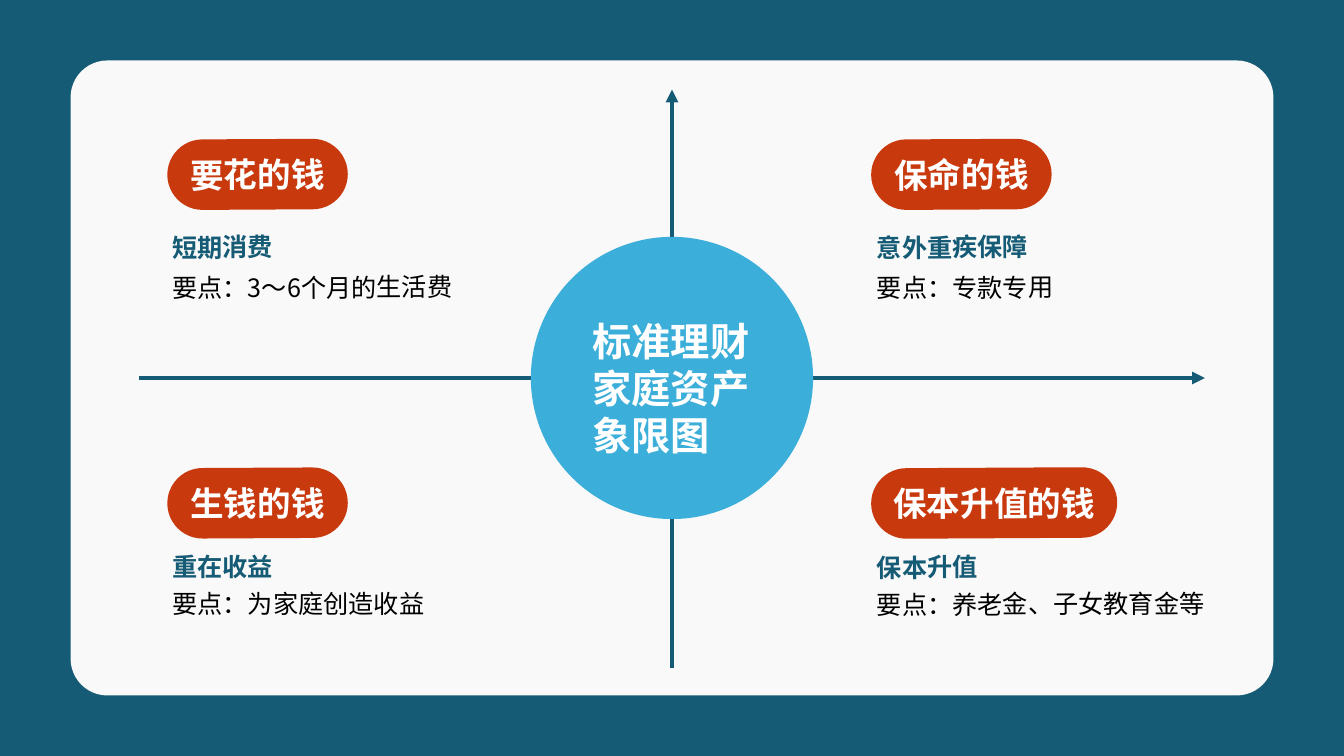
from dataclasses import dataclass

from lxml import etree
from pptx import Presentation
from pptx.dml.color import RGBColor
from pptx.enum.shapes import MSO_CONNECTOR, MSO_SHAPE
from pptx.enum.text import MSO_ANCHOR, MSO_AUTO_SIZE, PP_ALIGN
from pptx.oxml.ns import qn
from pptx.util import Inches, Pt

ROUNDED = MSO_SHAPE.ROUNDED_RECTANGLE
OVAL = MSO_SHAPE.OVAL
STRAIGHT = MSO_CONNECTOR.STRAIGHT
MIDDLE = MSO_ANCHOR.MIDDLE
TOP = MSO_ANCHOR.TOP
GROW = MSO_AUTO_SIZE.SHAPE_TO_FIT_TEXT
FIXED = MSO_AUTO_SIZE.NONE
LEFT = PP_ALIGN.LEFT
CENTER = PP_ALIGN.CENTER
JUSTIFY = PP_ALIGN.JUSTIFY

WIDTH = Inches(13.33)
HEIGHT = Inches(7.5)
FONT = "Noto Sans CJK SC"
TILT = 359.7
COLORS = {
    "teal": "155B75",
    "panel": "F9F9F9",
    "red": "C83A0E",
    "blue": "3BAEDA",
    "white": "FFFFFF",
    "black": "000000",
}
FORMATS = {
    "label": {"size": Pt(24), "bold": True, "color": "white"},
    "heading": {"size": Pt(18), "bold": True, "color": "teal"},
    "point": {"size": Pt(18), "bold": False, "color": "black"},
    "title": {"size": Pt(28), "bold": True, "color": "white"},
}


@dataclass(frozen=True)
class Area:
    """Shares of the slide in percent."""

    left: float
    top: float
    width: float
    height: float

    def lengths(self) -> tuple[int, int, int, int]:
        return (across(self.left), down(self.top),
                across(self.width), down(self.height))


@dataclass(frozen=True)
class Axis:
    start: tuple[float, float]
    end: tuple[float, float]


@dataclass(frozen=True)
class Quadrant:
    label: str
    heading: str
    point: str
    pill_left: float
    text_left: float
    pill_top: float
    heading_top: float
    point_top: float
    text_tilt: float = TILT


PANEL = Area(5.25, 8, 89.5, 84)
CIRCLE = Area(39.5, 31.33, 21, 37.33)
TITLE_AREA = Area(43.36, 41.33, 13.28, 20.13)
TITLE = ["标准理财", "家庭资产", "象限图"]
AXES = [
    Axis((50, 88.4), (50, 11.87)),
    Axis((10.35, 50), (89.65, 50)),
]
LEFT_COLUMN = (12.45, 12.08)
RIGHT_COLUMN = (64.82, 64.5)
UPPER_ROW = (18.4, 30, 35.33)
LOWER_ROW = (61.87, 72.33, 77.2)
QUADRANTS = [
    Quadrant("要花的钱", "短期消费", "要点：3～6个月的生活费", *LEFT_COLUMN, *UPPER_ROW),
    Quadrant("生钱的钱", "重在收益", "要点：为家庭创造收益", *LEFT_COLUMN, *LOWER_ROW, 0),
    Quadrant("保命的钱", "意外重疾保障", "要点：专款专用", *RIGHT_COLUMN, *UPPER_ROW),
    Quadrant("保本升值的钱", "保本升值", "要点：养老金、子女教育金等", *RIGHT_COLUMN, *LOWER_ROW),
]


def across(share: float) -> int:
    return round(WIDTH * share / 100)


def down(share: float) -> int:
    return round(HEIGHT * share / 100)


def color(name: str) -> RGBColor:
    return RGBColor.from_string(COLORS[name])


def text_width(text: str) -> float:
    units = sum(0.5 if letter.isascii() else 1 for letter in text)
    return 1.9 * units + 1.6


def write(box, lines: list[str], style: str, align, anchor, auto_size) -> None:
    frame = box.text_frame
    frame.word_wrap = True
    frame.auto_size = auto_size
    frame.vertical_anchor = anchor
    for index, line in enumerate(lines):
        para = frame.add_paragraph() if index else frame.paragraphs[0]
        para.alignment = align
        span = para.add_run()
        span.text = line
        for key, value in FORMATS[style].items():
            if key == "color":
                span.font.color.rgb = color(value)
            else:
                setattr(span.font, key, value)
        span.font.name = FONT
        properties = span.font._element
        etree.SubElement(properties, qn("a:ea")).set("typeface", FONT)


def add_block(page, kind, area: Area, fill: str, corner: float | None = None):
    block = page.shapes.add_shape(kind, *area.lengths())
    block.shadow.inherit = False
    block.fill.solid()
    block.fill.fore_color.rgb = color(fill)
    block.line.fill.background()
    if corner is not None:
        block.adjustments[0] = corner
    return block


def add_text(page, area: Area, lines: list[str], style: str,
             align=LEFT, tilt: float = 0) -> None:
    box = page.shapes.add_textbox(*area.lengths())
    box.rotation = tilt
    write(box, lines, style, align, TOP, GROW)


def add_axis(page, axis: Axis) -> None:
    (start_x, start_y), (end_x, end_y) = axis.start, axis.end
    arrow = page.shapes.add_connector(
        STRAIGHT, across(start_x), down(start_y), across(end_x), down(end_y))
    arrow.line.color.rgb = color("teal")
    arrow.line.width = Pt(3)
    properties = arrow._element.spPr
    line = properties.find(qn("a:ln"))
    etree.SubElement(line, qn("a:tailEnd")).set("type", "triangle")
    etree.SubElement(properties, qn("a:effectLst"))


def add_quadrant(page, quadrant: Quadrant) -> None:
    pill_width = 2.44 * len(quadrant.label) + 3.67
    pill_area = Area(quadrant.pill_left, quadrant.pill_top, pill_width, 9.33)
    pill = add_block(page, ROUNDED, pill_area, "red", 0.5)
    pill.rotation = TILT
    write(pill, [quadrant.label], "label", CENTER, MIDDLE, FIXED)
    for style, text, top in (
        ("heading", quadrant.heading, quadrant.heading_top),
        ("point", quadrant.point, quadrant.point_top),
    ):
        area = Area(quadrant.text_left, top, text_width(text), 5.33)
        add_text(page, area, [text], style, tilt=quadrant.text_tilt)


def main() -> None:
    deck = Presentation()
    deck.slide_width = WIDTH
    deck.slide_height = HEIGHT
    page = deck.slides.add_slide(deck.slide_layouts[6])
    page.background.fill.solid()
    page.background.fill.fore_color.rgb = color("teal")
    add_block(page, ROUNDED, PANEL, "panel", 0.058)
    for axis in AXES:
        add_axis(page, axis)
    for quadrant in QUADRANTS:
        add_quadrant(page, quadrant)
    add_block(page, OVAL, CIRCLE, "blue")
    add_text(page, TITLE_AREA, TITLE, "title", JUSTIFY)
    deck.save("out.pptx")


if __name__ == "__main__":
    main()
